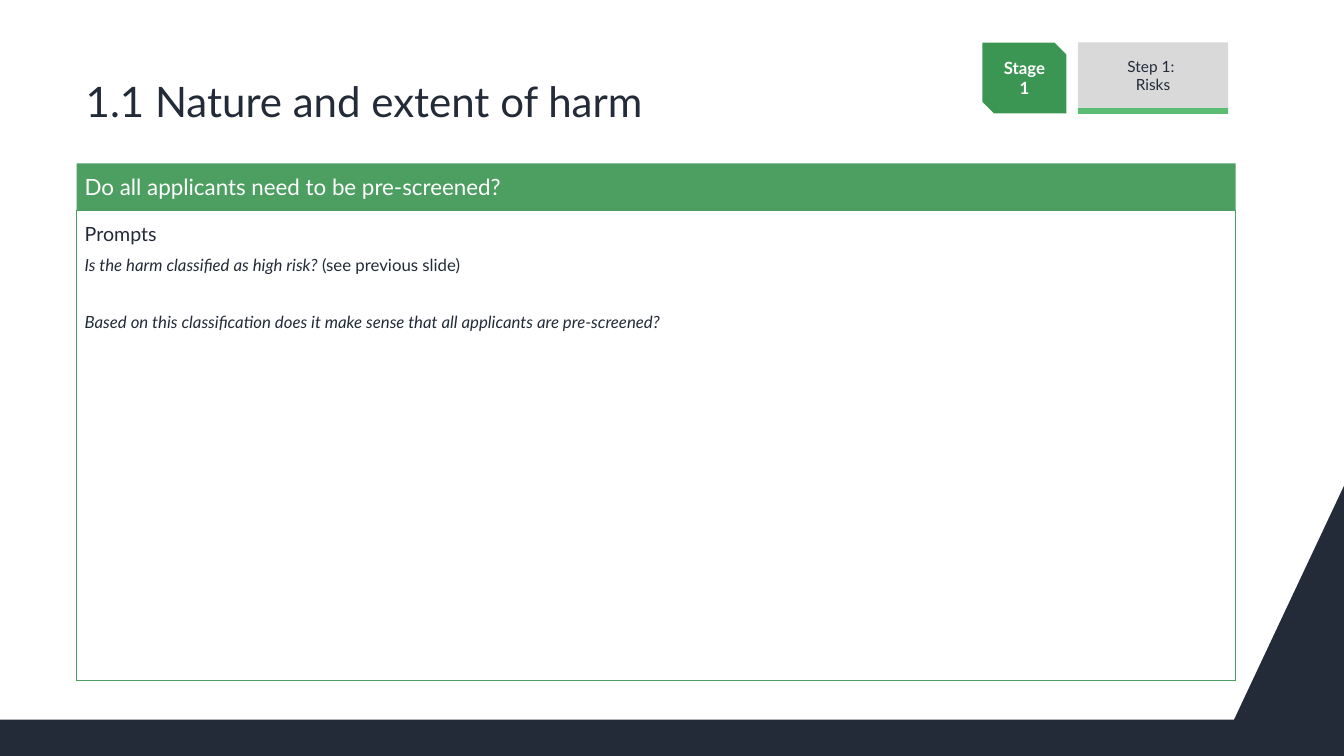
import pptx
import pptx.util
import pptx.dml.color
import pptx.enum.shapes
import pptx.enum.text

SHAPE = pptx.enum.shapes.MSO_SHAPE
ANCHOR = pptx.enum.text.MSO_ANCHOR
ALIGN = pptx.enum.text.PP_ALIGN

WIDTH = pptx.util.Inches(13.33)
HEIGHT = pptx.util.Inches(7.5)
NAVY, WHITE, GREY = "232B39", "FFFFFF", "D9D9D9"
GREEN, STAGE_GREEN, STEP_GREEN = "4C9E61", "3C9653", "5BBD74"


def color(hex_code):
    return pptx.dml.color.RGBColor.from_string(hex_code)


def to_emu(box):
    """Turn left, top, width, height in percent of the slide into EMU."""
    return [round(share * side / 100)
            for share, side in zip(box, (WIDTH, HEIGHT, WIDTH, HEIGHT))]


def paint(sp, fill=None, line=None, weight=0.75):
    sp.shadow.inherit = False
    if fill:
        sp.fill.solid()
        sp.fill.fore_color.rgb = color(fill)
    else:
        sp.fill.background()
    if line:
        sp.line.color.rgb = color(line)
        sp.line.width = pptx.util.Pt(weight)
    else:
        sp.line.fill.background()


def add_rect(shapes, box, kind=SHAPE.RECTANGLE, **look):
    sp = shapes.add_shape(kind, *to_emu(box))
    paint(sp, **look)
    return sp


def set_frame(sp, anchor=ANCHOR.MIDDLE, side=0.1, top=0.05):
    tf = sp.text_frame
    tf.word_wrap = True
    tf.vertical_anchor = anchor
    tf.margin_left = tf.margin_right = pptx.util.Inches(side)
    tf.margin_top = pptx.util.Inches(top)
    tf.margin_bottom = pptx.util.Inches(0.05)
    return tf


def add_run(p, text, size=12, ink=NAVY, bold=False, italic=False):
    r = p.add_run()
    r.text = text
    r.font.name = "Lato"
    r.font.size = pptx.util.Pt(size)
    r.font.color.rgb = color(ink)
    r.font.bold = bold
    r.font.italic = italic


def start_paragraph(p, before=0, align=ALIGN.LEFT):
    p.alignment = align
    p.space_before = pptx.util.Pt(before)
    return p


def add_corner(s):
    """Draw the dark footer band that rises along the right edge."""
    outline = [(91.82, 95.2), (0, 95.2), (0, 100), (100, 100), (100, 64.27)]
    points = [to_emu(point) for point in outline]
    builder = s.shapes.build_freeform(*points[0])
    builder.add_line_segments(points[1:], close=True)
    paint(builder.convert_to_shape(), fill=NAVY)


def add_title(s, box, text):
    tf = set_frame(s.shapes.add_textbox(*to_emu(box)), side=0.08)
    add_run(start_paragraph(tf.paragraphs[0]), text, size=30)


def add_question(s, box, question, prompts):
    """Place a header bar over a framed list of prompts."""
    left, top, width, height = box
    bar = 6.2
    body = add_rect(s.shapes, (left, top + bar, width, height - bar), line=GREEN)
    tf = set_frame(body, anchor=ANCHOR.TOP, side=0.08, top=0.12)
    for i, (before, runs) in enumerate(prompts):
        p = tf.add_paragraph() if i else tf.paragraphs[0]
        start_paragraph(p, before)
        for text, look in runs:
            add_run(p, text, **look)

    header = add_rect(s.shapes, (left, top, width, bar), fill=GREEN)
    tf = set_frame(header, side=0.08)
    add_run(start_paragraph(tf.paragraphs[0], 10), question, size=16, ink=WHITE)


def add_stage(s, box, text):
    sp = add_rect(s.shapes, box, SHAPE.SNIP_2_DIAG_RECTANGLE,
                  fill=STAGE_GREEN, line=WHITE, weight=2)
    p = start_paragraph(set_frame(sp).paragraphs[0], align=ALIGN.CENTER)
    add_run(p, text, ink=WHITE, bold=True)


def add_step(s, box, number, name):
    """Group a grey label with the green strip under it."""
    left, top, width, height = box
    label = height * 0.92
    group = s.shapes.add_group_shape()
    sp = add_rect(group.shapes, (left, top, width, label), fill=GREY)
    p = start_paragraph(set_frame(sp).paragraphs[0], align=ALIGN.CENTER)
    add_run(p, number, size=11)
    p.add_line_break()
    add_run(p, name, size=11)
    add_rect(group.shapes, (left, top + label, width, height - label),
             fill=STEP_GREEN)


def main():
    prs = pptx.Presentation()
    prs.slide_width, prs.slide_height = WIDTH, HEIGHT
    s = prs.slides.add_slide(prs.slide_layouts[6])

    # Each prompt: space before in points, then its runs
    prompts = [
        (6, [("Prompts", {"size": 14})]),
        (6, [("Is the harm classified as high risk? ", {"italic": True}),
             ("(see previous slide)", {})]),
        (26.4, [("Based on this classification does it make sense that all "
                 "applicants are pre-screened?", {"italic": True})]),
    ]
    add_corner(s)
    add_question(s, (5.7, 21.6, 86.24, 68.4),
                 "Do all applicants need to be pre-screened?", prompts)
    add_title(s, (5.78, 6.53, 86.24, 13.47), "1.1 Nature and extent of harm")
    add_stage(s, (73, 5.47, 6.45, 9.73), "Stage 1")
    add_step(s, (80.2, 5.6, 11.18, 9.47), "Step 1: ", "Risks")
    prs.save("out.pptx")


if __name__ == "__main__":
    main()
